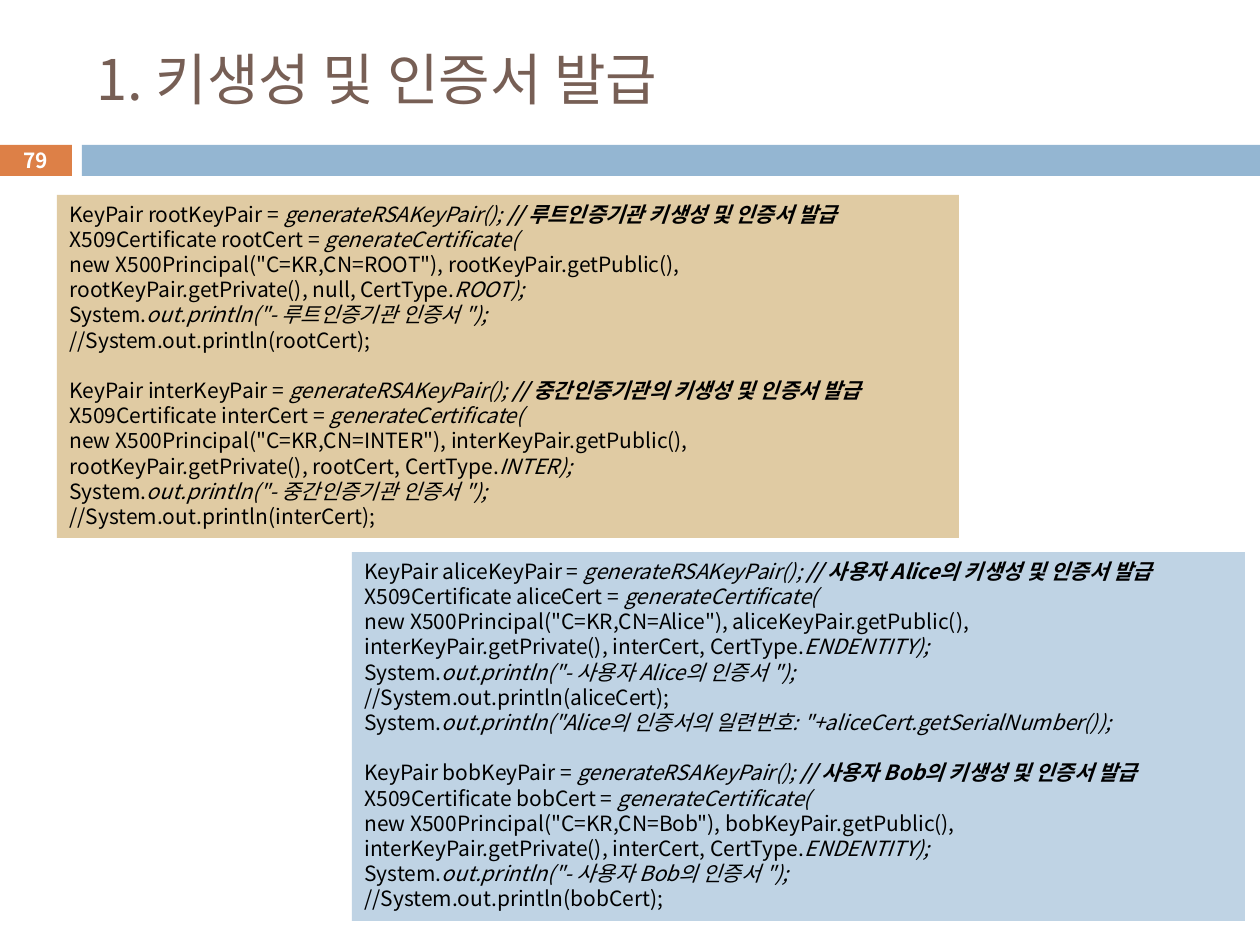
from lxml import etree
from pptx import Presentation
from pptx import util as u
from pptx.dml import color
from pptx.enum import shapes, text
from pptx.oxml import ns

# Content
TITLE = "1. 키생성 및 인증서 발급"
PAGE_NUMBER = "79"
ROOT = dict(key="root", subject="ROOT", signer="root", issuer="null", kind="ROOT",
            comment="루트인증기관 키생성 및 인증서 발급", label="루트인증기관 인증서")
INTER = dict(key="inter", subject="INTER", signer="root", issuer="rootCert", kind="INTER",
             comment="중간인증기관의 키생성 및 인증서 발급", label="중간인증기관 인증서")
ALICE = dict(key="alice", subject="Alice", signer="inter", issuer="interCert", kind="ENDENTITY",
             comment="사용자 Alice의 키생성 및 인증서 발급", label="사용자 Alice의 인증서",
             serial="Alice의 인증서의 일련번호: ")
BOB = dict(key="bob", subject="Bob", signer="inter", issuer="interCert", kind="ENDENTITY",
           comment="사용자 Bob의 키생성 및 인증서 발급", label="사용자 Bob의 인증서")

# Left, top, width, height in px
SLIDE = (1260, 945)
TITLE_AREA = (84, 32, 1124, 93)
NUMBER_AREA = (0, 145, 72, 31)
BAR_AREA = (82, 145, 1178, 31)
CODE_BOXES = [
    ("sand", (57, 195, 902, 343), [ROOT, INTER]),
    ("sky", (352, 552, 893, 369), [ALICE, BOB]),
]

THEME = dict(
    font="Noto Sans CJK KR",
    colors=dict(orange="DD8047", blue="94B6D2", brown="775F55", white="FFFFFF",
                black="000000", sand="E0CBA3", sky="BFD3E4"),
    sizes=dict(title=32, number=11.9, code=12),
    line=14.4,
)
PLAIN = {}
ITALIC = dict(italic=True)
COMMENT = dict(italic=True, bold=True)


def px(value):
    return u.Inches(value / 126)


def rgb(name):
    return color.RGBColor.from_string(THEME["colors"][name])


def place(shape, area):
    for side, value in zip(("left", "top", "width", "height"), area):
        setattr(shape, side, px(value))


def add_box(page, area, fill):
    box = page.shapes.add_shape(shapes.MSO_SHAPE.RECTANGLE, *map(px, area))
    box.shadow.inherit = False
    box.fill.solid()
    box.fill.fore_color.rgb = rgb(fill)
    box.line.fill.background()
    return box


def add_span(para, words, role, ink, style):
    span = para.add_run()
    span.text = words
    formats = dict(name=THEME["font"], size=u.Pt(THEME["sizes"][role]), **style)
    for name, value in formats.items():
        setattr(span.font, name, value)
    span.font.color.rgb = rgb(ink)
    # Korean letters take the East Asian typeface
    east = etree.SubElement(span.font._element, ns.qn("a:ea"))
    east.set("typeface", THEME["font"])


def code_lines(key, subject, signer, issuer, kind, comment, label, serial=None):
    lines = [
        [(f"KeyPair {key}KeyPair = ", PLAIN), ("generateRSAKeyPair(); ", ITALIC),
         (f"// {comment}", COMMENT)],
        [(f"X509Certificate {key}Cert = ", PLAIN), ("generateCertificate(", ITALIC)],
        [(f'new X500Principal("C=KR,CN={subject}"), {key}KeyPair.getPublic(),', PLAIN)],
        [(f"{signer}KeyPair.getPrivate(), {issuer}, CertType.", PLAIN), (f"{kind});", ITALIC)],
        [("System.", PLAIN), (f'out.println("- {label} ");', ITALIC)],
        [(f"//System.out.println({key}Cert);", PLAIN)],
    ]
    if serial:
        lines.append([("System.", PLAIN),
                      (f'out.println("{serial}"+{key}Cert.getSerialNumber());', ITALIC)])
    return lines


def add_code(page, fill, area, owners):
    frame = add_box(page, area, fill).text_frame
    frame.word_wrap = True
    frame.vertical_anchor = text.MSO_ANCHOR.TOP
    para = frame.paragraphs[0]
    for block, owner in enumerate(owners):
        for row, line in enumerate(code_lines(**owner)):
            if block or row:
                para = frame.add_paragraph()
            para.alignment = text.PP_ALIGN.LEFT
            para.line_spacing = u.Pt(THEME["line"])
            # One line of space parts the blocks
            para.space_before = u.Pt(THEME["line"] if block and not row else 0)
            for words, style in line:
                add_span(para, words, "code", "black", style)


def main():
    deck = Presentation()
    deck.slide_width, deck.slide_height = map(px, SLIDE)
    page = deck.slides.add_slide(deck.slide_layouts[5])

    # Title
    title = page.shapes.title
    place(title, TITLE_AREA)
    title.text_frame.vertical_anchor = text.MSO_ANCHOR.MIDDLE
    para = title.text_frame.paragraphs[0]
    para.alignment = text.PP_ALIGN.LEFT
    add_span(para, TITLE, "title", "brown", PLAIN)

    # Page number and header bar
    frame = add_box(page, NUMBER_AREA, "orange").text_frame
    frame.margin_top = frame.margin_bottom = 0
    frame.vertical_anchor = text.MSO_ANCHOR.MIDDLE
    para = frame.paragraphs[0]
    para.alignment = text.PP_ALIGN.CENTER
    add_span(para, PAGE_NUMBER, "number", "white", dict(bold=True))
    add_box(page, BAR_AREA, "blue")

    # Code listings
    for fill, area, owners in CODE_BOXES:
        add_code(page, fill, area, owners)

    deck.save("out.pptx")


if __name__ == "__main__":
    main()
